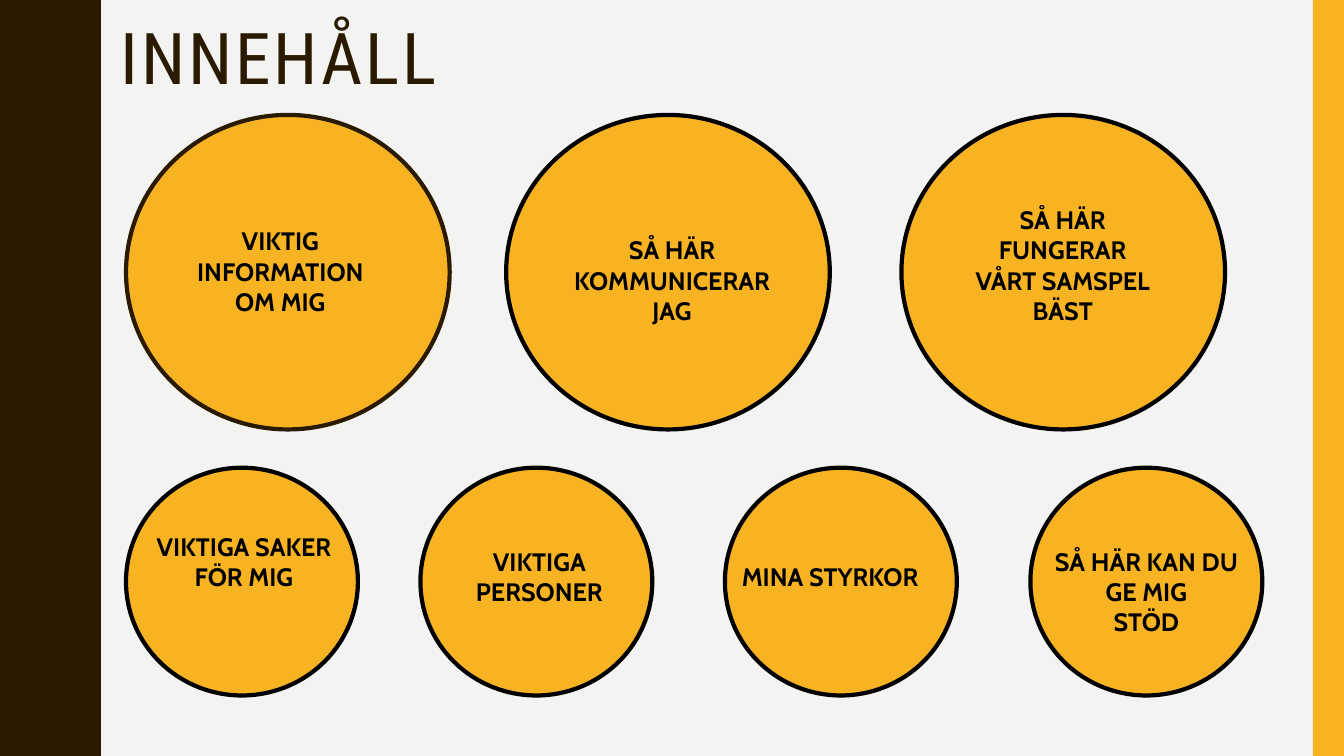
import pptx
import pptx.util
import pptx.dml.color
import pptx.enum.shapes
import pptx.enum.text
from pptx.util import Inches

DARK, GOLD, BLACK, PAPER = "2A1A00", "F8B323", "000000", "F3F3F2"
SHAPE = pptx.enum.shapes.MSO_SHAPE
ALIGN = pptx.enum.text.PP_ALIGN


def rgb(value):
    return pptx.dml.color.RGBColor.from_string(value)


class Deck:
    font, title_font = "Cabin", "Roboto Condensed"

    def __init__(self, prs):
        self.s = prs.slides.add_slide(prs.slide_layouts[5])
        bg = self.s.background.fill
        bg.solid()
        bg.fore_color.rgb = rgb(PAPER)

    def paint(self, sp, fill, line=None):
        sp.shadow.inherit = False
        sp.fill.solid()
        sp.fill.fore_color.rgb = rgb(fill)
        if line:
            sp.line.color.rgb = rgb(line)
            sp.line.width = pptx.util.Pt(3)
        else:
            sp.line.fill.background()

    def shape(self, kind, x, y, w, h, fill, line=None):
        sp = self.s.shapes.add_shape(kind, Inches(x), Inches(y), Inches(w), Inches(h))
        self.paint(sp, fill, line)

    def freeform(self, points, fill):
        fb = self.s.shapes.build_freeform(0, 0, scale=Inches(1))
        fb.add_line_segments(points, close=True)
        self.paint(fb.convert_to_shape(), fill)

    def run(self, p, text, size, font, color, bold=False):
        r = p.add_run()
        r.text = text
        r.font.size, r.font.name, r.font.bold = pptx.util.Pt(size), font, bold
        r.font.color.rgb = rgb(color)
        return r

    def frame(self, sp):
        tf = sp.text_frame
        tf.word_wrap = True
        tf.auto_size = pptx.enum.text.MSO_AUTO_SIZE.NONE
        tf.vertical_anchor = pptx.enum.text.MSO_ANCHOR.TOP
        return tf.paragraphs[0]

    def label(self, x, y, w, h, text, align):
        sp = self.s.shapes.add_textbox(Inches(x), Inches(y), Inches(w), Inches(h))
        p = self.frame(sp)
        p.alignment = align
        for i, line in enumerate(text.split("\n")):
            if i:
                p.add_line_break()
            self.run(p, line, 18, self.font, BLACK, True)

    def title(self, x, y, w, h, text):
        sp = self.s.shapes.title
        sp.left, sp.top, sp.width, sp.height = Inches(x), Inches(y), Inches(w), Inches(h)
        p = self.frame(sp)
        p.alignment, p.line_spacing = ALIGN.LEFT, 0.9
        r = self.run(p, text, 51, self.title_font, DARK)
        r.font._element.set("spc", "200")


def wave_points():
    # Half a wave, trough to crest; the other half mirrors it
    rise = [(0.78, 0), (0.78, 0.07), (0.79, 0.14), (0.8, 0.2), (0.81, 0.25),
            (0.83, 0.29), (0.85, 0.33), (0.87, 0.38), (0.89, 0.42), (0.91, 0.46),
            (0.93, 0.5), (0.95, 0.55), (0.96, 0.61), (0.97, 0.68), (0.97, 0.75)]
    period = 1.5
    wave = rise + [(x, period - y) for x, y in reversed(rise[1:-1])]
    edge = [(x, y + period * i) for i in range(5) for x, y in wave]
    return edge + [(0.78, 7.5), (0, 7.5)]


def main():
    prs = pptx.Presentation()
    prs.slide_width, prs.slide_height = Inches(13.33), Inches(7.5)
    d = Deck(prs)

    # Side decoration
    d.freeform(wave_points(), DARK)
    d.shape(SHAPE.RECTANGLE, 13.02, 0, 0.31, 7.5, GOLD)

    # Rows of circles: top, width, height, then circle left, outline, label box, text
    rows = [
        (4.64, 2.3, 2.26, [
            (10.22, BLACK, (10.35, 5.37, 2.04, 1.01), "SÅ HÄR KAN DU GE MIG\nSTÖD"),
            (7.19, BLACK, (7.26, 5.52, 2.3, 0.4), "MINA STYRKOR"),
            (4.17, BLACK, (4.33, 5.37, 2.04, 0.71), "VIKTIGA\nPERSONER"),
            (1.25, BLACK, (1.4, 5.22, 2.04, 1.01), "VIKTIGA SAKER FÖR MIG")]),
        (1.14, 3.21, 3.12, [
            (8.94, BLACK, (9.52, 1.98, 2.04, 1.62),
             "SÅ HÄR\nFUNGERAR VÅRT SAMSPEL\nBÄST"),
            (5.02, BLACK, (5.46, 2.28, 2.41, 1.01), "SÅ HÄR\nKOMMUNICERAR\nJAG"),
            (1.25, DARK, (1.72, 2.19, 2.12, 1.01), "VIKTIG INFORMATION OM MIG")]),
    ]
    for top, w, h, circles in rows:
        for left, line, box, text in circles:
            d.shape(SHAPE.OVAL, left, top, w, h, GOLD, line)
            align = ALIGN.LEFT if text == "MINA STYRKOR" else ALIGN.CENTER
            d.label(*box, text, align)

    # Title
    d.title(1.1, 0.18, 11.13, 1.63, "INNEHÅLL")

    prs.save("out.pptx")


if __name__ == "__main__":
    main()
